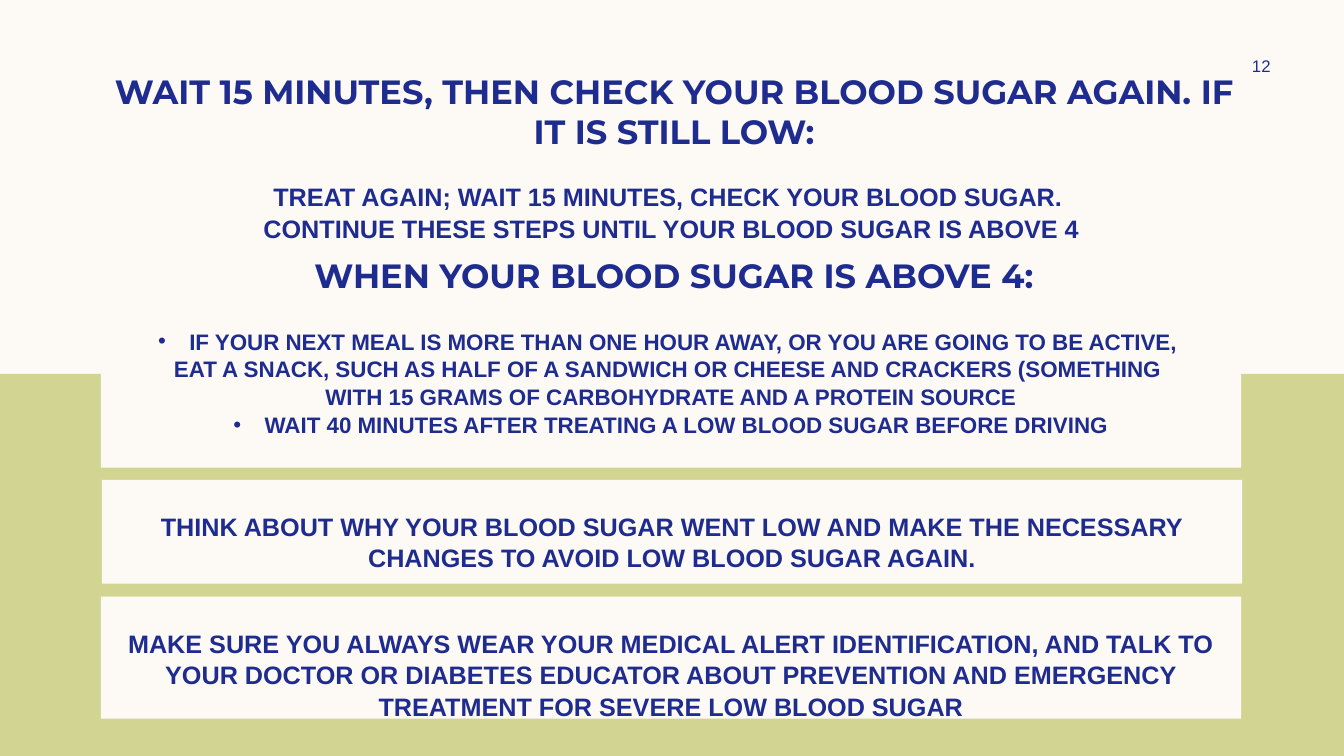
from lxml.etree import SubElement
from pptx import Presentation
from pptx.dml.color import RGBColor
from pptx.enum.shapes import MSO_SHAPE
from pptx.enum.text import MSO_ANCHOR, PP_ALIGN
from pptx.oxml.ns import qn
from pptx.util import Inches, Pt

COLORS = {"cream": "FDFAF6", "green": "D2D592", "navy": "1F2C8F"}
BODY_FONT, HEADING_FONT = "Arial", "Montserrat"
PANEL_WIDTH = 11.31
BULLET_INDENT = 0.31

MEAL_LINES = [
    "• IF YOUR NEXT MEAL IS MORE THAN ONE HOUR AWAY, OR YOU ARE GOING TO BE ACTIVE, ",
    "EAT A SNACK, SUCH AS HALF OF A SANDWICH OR CHEESE AND CRACKERS (SOMETHING ",
    "WITH 15 GRAMS OF CARBOHYDRATE AND A PROTEIN SOURCE",
    "• WAIT 40 MINUTES AFTER TREATING A LOW BLOOD SUGAR BEFORE DRIVING",
]
THINK_LINES = [
    "THINK ABOUT WHY YOUR BLOOD SUGAR WENT LOW AND MAKE THE NECESSARY "
    "CHANGES TO AVOID LOW BLOOD SUGAR AGAIN.",
]
IDENTIFICATION_LINES = [
    "MAKE SURE YOU ALWAYS WEAR YOUR MEDICAL ALERT IDENTIFICATION, AND TALK TO "
    "YOUR DOCTOR OR DIABETES EDUCATOR ABOUT PREVENTION AND EMERGENCY "
    "TREATMENT FOR SEVERE LOW BLOOD SUGAR",
]
TREAT_LINES = [
    "TREAT AGAIN; WAIT 15 MINUTES, CHECK YOUR BLOOD SUGAR. ",
    "CONTINUE THESE STEPS UNTIL YOUR BLOOD SUGAR IS ABOVE 4",
]


def add_block(slide, box, color):
    block = slide.shapes.add_shape(MSO_SHAPE.RECTANGLE, *map(Inches, box))
    block.shadow.inherit = False
    block.fill.solid()
    block.fill.fore_color.rgb = RGBColor.from_string(COLORS[color])
    block.line.fill.background()
    return block


def add_bullet(paragraph):
    properties = paragraph._p.get_or_add_pPr()
    properties.set("marL", str(Inches(BULLET_INDENT)))
    properties.set("indent", str(-Inches(BULLET_INDENT)))
    SubElement(properties, qn("a:buFont"), typeface=BODY_FONT)
    SubElement(properties, qn("a:buChar"), char="•")


def write_lines(frame, lines, size, font=BODY_FONT, bold=True, spacing=None):
    """Fill a text frame with centred lines; a leading "• " makes a bullet."""
    frame.word_wrap = True
    for index, line in enumerate(lines):
        paragraph = frame.add_paragraph() if index else frame.paragraphs[0]
        paragraph.text = line.removeprefix("• ")
        paragraph.alignment = PP_ALIGN.CENTER
        paragraph.line_spacing = spacing
        paragraph.font.name = font
        paragraph.font.size = Pt(size)
        paragraph.font.bold = bold
        paragraph.font.color.rgb = RGBColor.from_string(COLORS["navy"])
        if line.startswith("• "):
            add_bullet(paragraph)


def add_panel(slide, box, lines, size=18):
    frame = add_block(slide, box, "cream").text_frame
    frame.vertical_anchor = MSO_ANCHOR.TOP
    frame.margin_left = frame.margin_right = 0
    frame.margin_top, frame.margin_bottom = Inches(0.3), Inches(0.05)
    write_lines(frame, lines, size, spacing=1.04)


def add_heading(slide, box, text):
    frame = slide.shapes.add_textbox(*map(Inches, box)).text_frame
    write_lines(frame, [text], 24, HEADING_FONT)


def add_page_number(slide, box, number):
    frame = slide.shapes.add_textbox(*map(Inches, box)).text_frame
    frame.vertical_anchor = MSO_ANCHOR.MIDDLE
    write_lines(frame, [number], 12, bold=False)


def build_treatment_slide(presentation):
    slide = presentation.slides.add_slide(presentation.slide_layouts[6])
    slide.background.fill.solid()
    slide.background.fill.fore_color.rgb = RGBColor.from_string(COLORS["cream"])

    add_block(slide, (-0.03, 3.71, 13.36, 3.79), "green")
    add_heading(slide, (0.85, 0.65, 11.67, 1.27),
                "WAIT 15 MINUTES, THEN CHECK YOUR BLOOD SUGAR AGAIN. IF IT IS STILL LOW:")
    add_page_number(slide, (11.97, 0.5, 1.08, 0.3), "12")
    add_panel(slide, (1, 2.94, PANEL_WIDTH, 1.7), MEAL_LINES, 16)
    add_panel(slide, (1.01, 4.76, PANEL_WIDTH, 1.03), THINK_LINES)
    add_panel(slide, (1, 5.92, PANEL_WIDTH, 1.21), IDENTIFICATION_LINES)
    add_heading(slide, (0.85, 2.48, 11.67, 0.84), "WHEN YOUR BLOOD SUGAR IS ABOVE 4:")
    add_panel(slide, (1.49, 1.49, 10.34, 0.84), TREAT_LINES)


def main():
    presentation = Presentation()
    presentation.slide_width, presentation.slide_height = Inches(13.33), Inches(7.5)
    build_treatment_slide(presentation)
    presentation.save("out.pptx")


if __name__ == "__main__":
    main()
